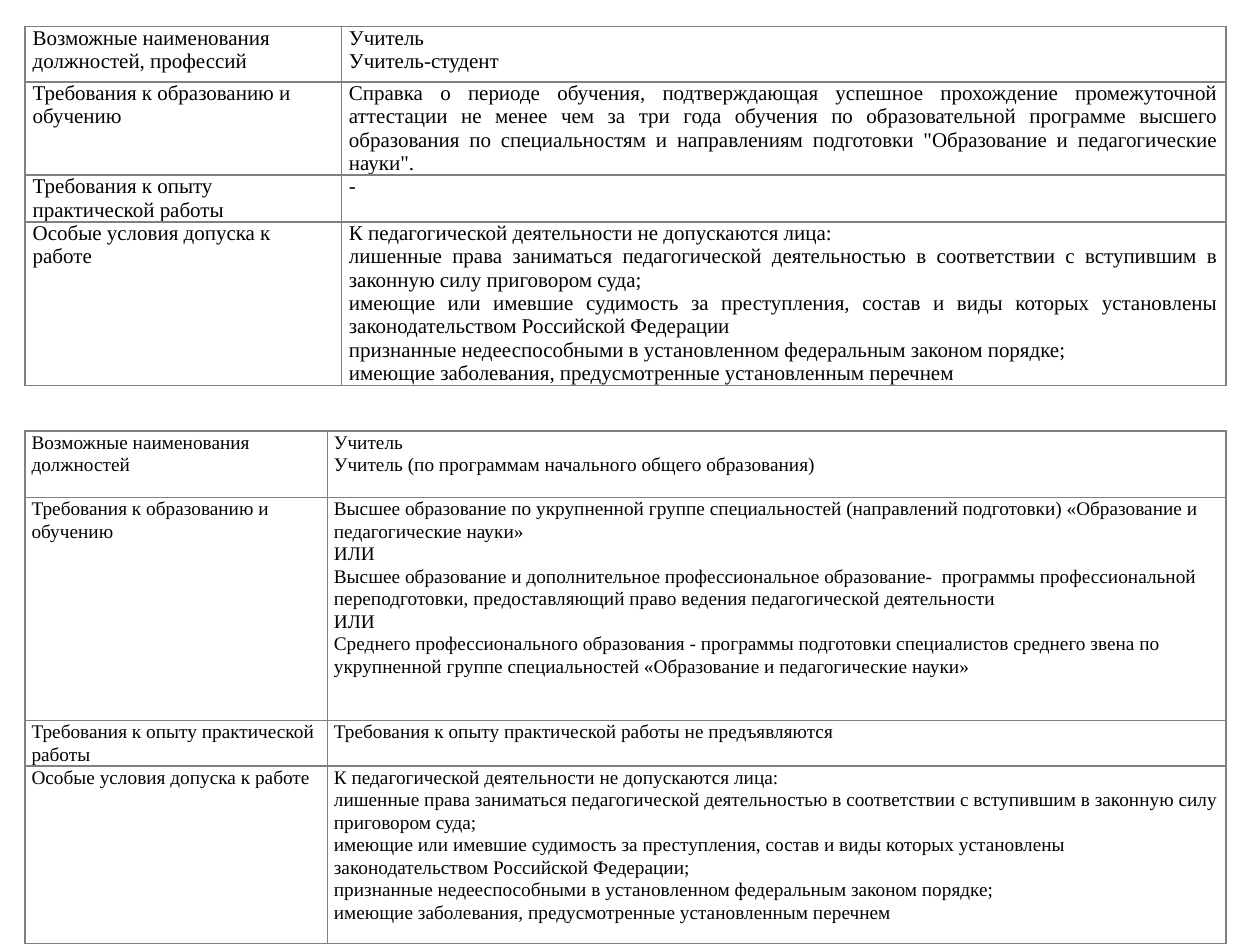
from lxml import etree
from pptx import Presentation
from pptx import util as u
from pptx.dml import color
from pptx.enum import text
from pptx.oxml import ns

COLORS = {"ink": "000000", "border": "808080"}
FONT = "Times New Roman"
EDUCATION = "Требования к образованию и обучению"
EXPERIENCE = "Требования к опыту практической работы"
ADMISSION = "Особые условия допуска к работе"


def banned_persons(law_ending):
    """Return the lines on persons barred from teaching."""
    return [
        "К педагогической деятельности не допускаются лица:",
        "лишенные права заниматься педагогической деятельностью в соответствии "
        "с вступившим в законную силу приговором суда;",
        "имеющие или имевшие судимость за преступления, состав и виды которых "
        "установлены законодательством Российской Федерации" + law_ending,
        "признанные недееспособными в установленном федеральным законом порядке;",
        "имеющие заболевания, предусмотренные установленным перечнем",
    ]


STUDENT_ROWS = [
    ("Возможные наименования должностей, профессий", ["Учитель", "Учитель-студент"]),
    (EDUCATION, [
        "Справка о периоде обучения, подтверждающая успешное прохождение "
        "промежуточной аттестации не менее чем за три года обучения по "
        "образовательной программе высшего образования по специальностям и "
        "направлениям подготовки \"Образование и педагогические науки\".",
    ]),
    (EXPERIENCE, ["-"]),
    (ADMISSION, banned_persons("")),
]
TEACHER_ROWS = [
    ("Возможные наименования должностей",
     ["Учитель", "Учитель (по программам начального общего образования)"]),
    (EDUCATION, [
        "Высшее образование по укрупненной группе специальностей (направлений "
        "подготовки) «Образование и педагогические науки»",
        "ИЛИ",
        "Высшее образование и дополнительное профессиональное образование-  "
        "программы профессиональной переподготовки, предоставляющий право "
        "ведения педагогической деятельности",
        "ИЛИ",
        "Среднего профессионального образования - программы подготовки "
        "специалистов среднего звена по укрупненной группе специальностей "
        "«Образование и педагогические науки»",
    ]),
    (EXPERIENCE, ["Требования к опыту практической работы не предъявляются"]),
    (ADMISSION, banned_persons(";")),
]
STUDENT_FORMAT = {"size": 12, "inset": 0.06, "spacing": 1.0,
                  "align": text.PP_ALIGN.JUSTIFY}
TEACHER_FORMAT = {"size": 11, "inset": 0.05, "spacing": 1.05,
                  "align": text.PP_ALIGN.LEFT}


def set_values(target, values):
    """Set each named attribute of the target."""
    for name, value in values.items():
        setattr(target, name, value)


def draw_borders(cell):
    """Give the cell a thin line on all four sides."""
    properties = cell._tc.get_or_add_tcPr()
    for index, side in enumerate(("lnL", "lnR", "lnT", "lnB")):
        line = etree.Element(ns.qn("a:" + side), w=str(u.Pt(1)))
        fill = etree.SubElement(line, ns.qn("a:solidFill"))
        etree.SubElement(fill, ns.qn("a:srgbClr"), val=COLORS["border"])
        properties.insert(index, line)


def fill_cell(cell, lines, style, align):
    """Write the lines into a bordered, unfilled cell."""
    inset = u.Inches(style["inset"])
    set_values(cell, {"margin_left": inset, "margin_right": inset,
                      "margin_top": 0, "margin_bottom": 0})
    cell.fill.background()
    draw_borders(cell)
    cell.text_frame.text = "\n".join(lines)
    for para in cell.text_frame.paragraphs:
        set_values(para, {"alignment": align, "line_spacing": style["spacing"]})
        for span in para.runs:
            set_values(span.font, {"name": FONT, "size": u.Pt(style["size"]),
                                   "bold": False})
            span.font.color.rgb = color.RGBColor.from_string(COLORS["ink"])


def add_requirements(page, box, label_width, heights, rows, style):
    """Add a two-column table of requirements inside the box."""
    left, top, width = box
    frame = page.shapes.add_table(len(rows), 2, u.Inches(left), u.Inches(top),
                                  u.Inches(width), u.Inches(sum(heights)))
    table = frame.table
    set_values(table, {"first_row": False, "horz_banding": False})
    for column, size in zip(table.columns, (label_width, width - label_width)):
        column.width = u.Inches(size)
    for index, (label, lines) in enumerate(rows):
        table.rows[index].height = u.Inches(heights[index])
        align = style["align"] if index else text.PP_ALIGN.LEFT
        fill_cell(table.cell(index, 0), [label], style, text.PP_ALIGN.LEFT)
        fill_cell(table.cell(index, 1), lines, style, align)


def main():
    """Build the slide and save it."""
    deck = Presentation()
    set_values(deck, {"slide_width": u.Inches(10), "slide_height": u.Inches(7.5)})
    page = deck.slides.add_slide(deck.slide_layouts[6])
    add_requirements(page, (0.2, 0.21, 9.53), 2.51, (0.44, 0.74, 0.37, 1.3),
                     STUDENT_ROWS, STUDENT_FORMAT)
    add_requirements(page, (0.2, 3.42, 9.53), 2.4, (0.53, 1.77, 0.36, 1.41),
                     TEACHER_ROWS, TEACHER_FORMAT)
    deck.save("out.pptx")


if __name__ == "__main__":
    main()
